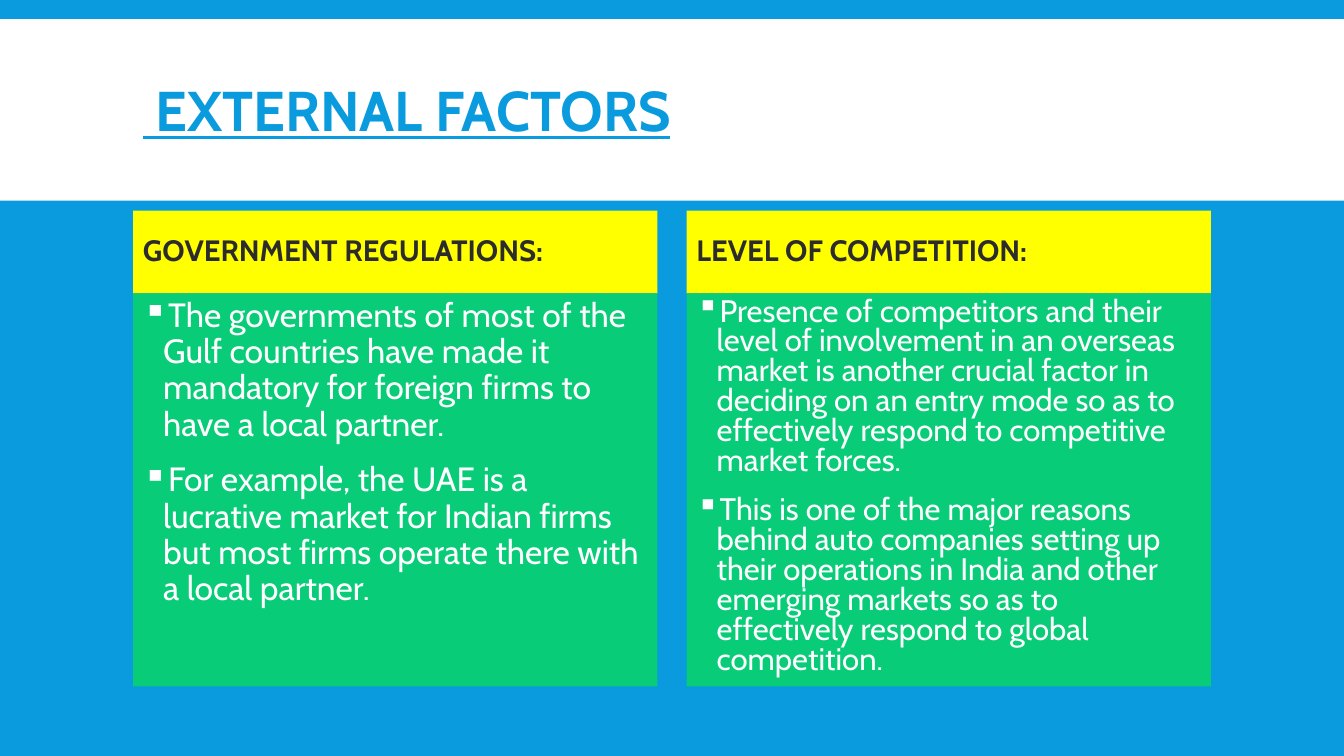
import pptx
import pptx.dml.color
import pptx.enum.shapes
import pptx.enum.text
import pptx.oxml.ns
import pptx.util
from lxml import etree
from pptx.util import Inches

COLORS = {
    "blue": "099BDD",
    "white": "FFFFFF",
    "yellow": "FFFF00",
    "green": "08CC78",
    "dark": "2C2C2C",
}
FONT = "Cabin"
ANCHOR = pptx.enum.text.MSO_ANCHOR


def rgb(name):
    return pptx.dml.color.RGBColor.from_string(COLORS[name])


def write(shape, paragraphs, *, size, color, bold=False, underline=False,
          anchor=ANCHOR.MIDDLE, spacing=0.9, before=12, after=2, bullet=None):
    frame = shape.text_frame
    frame.word_wrap = True
    frame.vertical_anchor = anchor
    for index, text in enumerate(paragraphs):
        paragraph = frame.paragraphs[0] if index == 0 else frame.add_paragraph()
        paragraph.alignment = pptx.enum.text.PP_ALIGN.LEFT
        paragraph.line_spacing = spacing
        paragraph.space_before = pptx.util.Pt(before)
        paragraph.space_after = pptx.util.Pt(after)
        run = paragraph.add_run()
        run.text = text
        run.font.name = FONT
        run.font.size = pptx.util.Pt(size)
        run.font.bold = bold
        run.font.underline = underline
        run.font.color.rgb = rgb(color)
        if bullet:
            properties = paragraph._p.get_or_add_pPr()
            properties.set("marL", str(Inches(0.2)))
            properties.set("indent", str(Inches(-0.2)))
            mark = etree.SubElement(properties, pptx.oxml.ns.qn("a:buChar"))
            mark.set("char", bullet)


presentation = pptx.Presentation()
presentation.slide_width = Inches(13.33)
presentation.slide_height = Inches(7.5)
slide = presentation.slides.add_slide(presentation.slide_layouts[6])
slide.background.fill.solid()
slide.background.fill.fore_color.rgb = rgb("blue")

# Filled areas: title band, then a heading and a body for each column
column_lefts = [1.32, 6.81]
areas = [(0, 0.19, 13.33, 1.8, "white")]
for left in column_lefts:
    areas.append((left, 2.09, 5.2, 0.82, "yellow"))
    areas.append((left, 2.91, 5.2, 3.9, "green"))

panels = []
for left, top, width, height, fill in areas:
    panel = slide.shapes.add_shape(
        pptx.enum.shapes.MSO_SHAPE.RECTANGLE,
        Inches(left), Inches(top), Inches(width), Inches(height))
    panel.shadow.inherit = False
    panel.fill.solid()
    panel.fill.fore_color.rgb = rgb(fill)
    panel.line.fill.background()
    panels.append(panel)

title = slide.shapes.add_textbox(
    Inches(1.32), Inches(0.31), Inches(10.7), Inches(1.65))
write(title, [" EXTERNAL FACTORS"], size=40, color="blue", bold=True,
      underline=True, spacing=0.85, before=0, after=0)

factors = [
    ("GOVERNMENT REGULATIONS:", 24, 0.9, [
        "The governments of most of the Gulf countries have made it mandatory "
        "for foreign firms to have a local partner.",
        "For example, the UAE is a lucrative market for Indian firms but most "
        "firms operate there with a local partner.",
    ]),
    ("LEVEL OF COMPETITION:", 22.2, 0.8, [
        "Presence of competitors and their level of involvement in an overseas "
        "market is another crucial factor in deciding on an entry mode so as to "
        "effectively respond to competitive market forces.",
        "This is one of the major reasons behind auto companies setting up their "
        "operations in India and other emerging markets so as to effectively "
        "respond to global competition.",
    ]),
]
for (heading, size, spacing, points), heading_panel, body_panel in zip(
        factors, panels[1::2], panels[2::2]):
    write(heading_panel, [heading], size=21, color="dark", bold=True)
    write(body_panel, points, size=size, color="white", spacing=spacing,
          anchor=ANCHOR.TOP, bullet="▪")

presentation.save("out.pptx")
